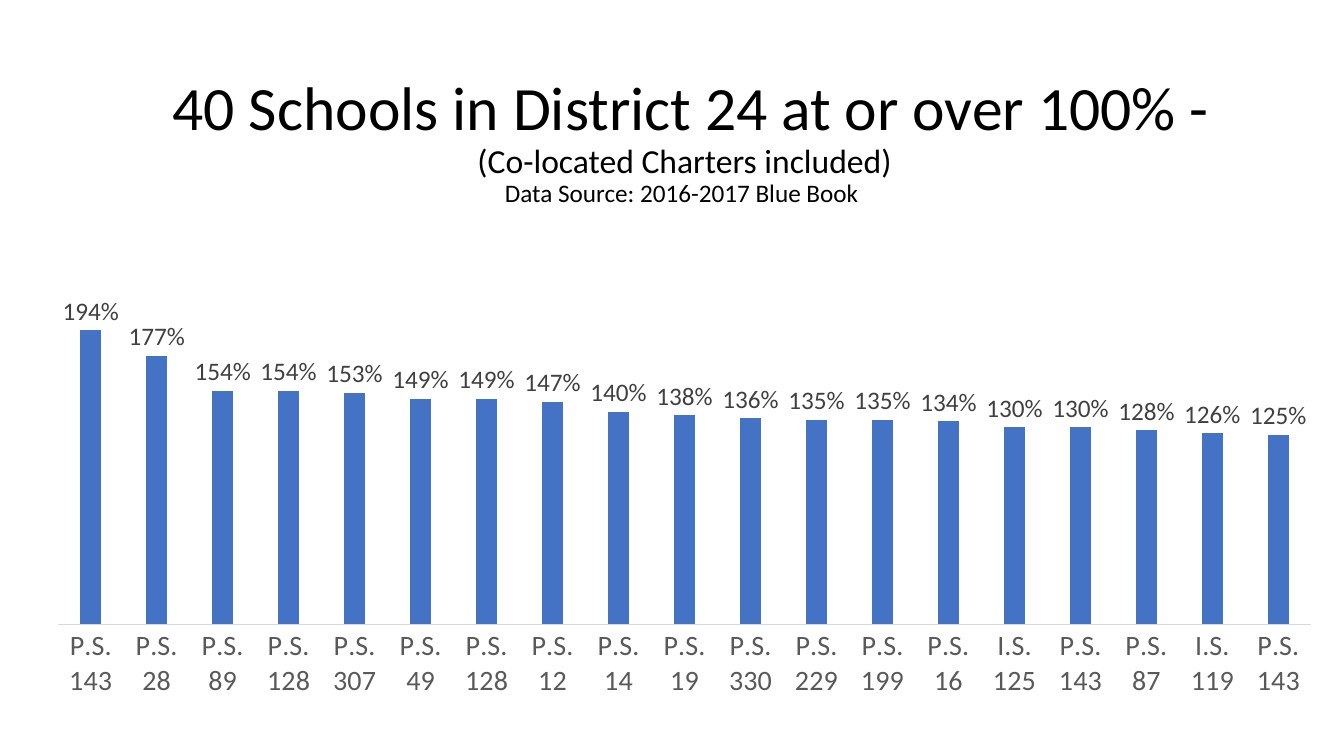
import lxml.etree
import pptx
import pptx.chart.data
import pptx.dml.color
import pptx.enum.chart
import pptx.enum.text
import pptx.oxml.ns
import pptx.util

Inches = pptx.util.Inches
Pt = pptx.util.Pt
qn = pptx.oxml.ns.qn

FONT = "Calibri"
COLORS = {
    "title": "000000",
    "bar": "4472C4",
    "label": "404040",
    "axis": "595959",
    "line": "D9D9D9",
}
TITLE = [
    (" 40 Schools in District 24 at or over 100% -", 44),
    ("(Co-located Charters included)", 24),
    ("Data Source: 2016-2017 Blue Book ", 18),
]
SCHOOLS = [
    ("P.S. 143", 1.94), ("P.S. 28", 1.77), ("P.S. 89", 1.54),
    ("P.S. 128", 1.54), ("P.S. 307", 1.53), ("P.S. 49", 1.49),
    ("P.S. 128", 1.49), ("P.S. 12", 1.47), ("P.S. 14", 1.4),
    ("P.S. 19", 1.38), ("P.S. 330", 1.36), ("P.S. 229", 1.35),
    ("P.S. 199", 1.35), ("P.S. 16", 1.34), ("I.S. 125", 1.3),
    ("P.S. 143", 1.3), ("P.S. 87", 1.28), ("I.S. 119", 1.26),
    ("P.S. 143", 1.25),
]
PLOT = {"x": 0.012, "y": 0.043, "w": 0.976, "h": 0.774}


def apply(item, values):
    for name, value in values.items():
        setattr(item, name, value)


def color(name):
    return pptx.dml.color.RGBColor.from_string(COLORS[name])


def style(font, size, name):
    apply(font, {"name": FONT, "size": Pt(size), "bold": False})
    font.color.rgb = color(name)


def add_title(slide):
    title = slide.shapes.title
    apply(title, {
        "left": Inches(1.04), "top": Inches(0.69),
        "width": Inches(11.5), "height": Inches(1.45),
    })
    frame = title.text_frame
    apply(frame, {
        "word_wrap": True,
        "auto_size": pptx.enum.text.MSO_AUTO_SIZE.NONE,
        "vertical_anchor": pptx.enum.text.MSO_ANCHOR.MIDDLE,
    })
    para = frame.paragraphs[0]
    apply(para, {"alignment": pptx.enum.text.PP_ALIGN.CENTER, "line_spacing": 0.9})
    for index, (text, size) in enumerate(TITLE):
        run = para.add_run()
        run.text = text
        style(run.font, size, "title")
        if index < len(TITLE) - 1:
            para.add_line_break()
            lxml.etree.SubElement(para._p[-1], qn("a:rPr"), sz=str(size * 100))


def place_plot(chart):
    area = chart._chartSpace.chart.plotArea
    for old in area.findall(qn("c:layout")):
        area.remove(old)
    layout = lxml.etree.Element(qn("c:layout"))
    area.insert(0, layout)
    manual = lxml.etree.SubElement(layout, qn("c:manualLayout"))
    values = {"layoutTarget": "inner", "xMode": "edge", "yMode": "edge", **PLOT}
    for name, value in values.items():
        lxml.etree.SubElement(manual, qn("c:" + name), val=str(value))


def add_bars(slide):
    data = pptx.chart.data.CategoryChartData(number_format="0%")
    names, rates = zip(*SCHOOLS)
    data.categories = names
    data.add_series("Series 1", rates)
    chart = slide.shapes.add_chart(
        pptx.enum.chart.XL_CHART_TYPE.COLUMN_CLUSTERED,
        Inches(0.42), Inches(2.23), Inches(12.74), Inches(4.85), data,
    ).chart
    apply(chart, {"has_legend": False, "has_title": False})
    style(chart.font, 10, "title")
    place_plot(chart)

    plot = chart.plots[0]
    apply(plot, {"gap_width": 219, "overlap": -27, "vary_by_categories": False})
    bars = plot.series[0]
    bars.format.fill.solid()
    bars.format.fill.fore_color.rgb = color("bar")
    labels = bars.data_labels
    apply(labels, {
        "show_value": True,
        "number_format": "0%",
        "number_format_is_linked": False,
        "position": pptx.enum.chart.XL_LABEL_POSITION.OUTSIDE_END,
    })
    style(labels.font, 18, "label")

    none = pptx.enum.chart.XL_TICK_MARK.NONE
    axis = chart.category_axis
    apply(axis, {"major_tick_mark": none, "minor_tick_mark": none})
    style(axis.tick_labels.font, 20, "axis")
    axis.format.line.color.rgb = color("line")
    axis.format.line.width = Pt(0.75)
    apply(chart.value_axis, {
        "visible": False, "has_major_gridlines": False,
        "minimum_scale": 0, "maximum_scale": 2.5,
    })


def main():
    deck = pptx.Presentation()
    apply(deck, {"slide_width": Inches(13.33), "slide_height": Inches(7.5)})
    slide = deck.slides.add_slide(deck.slide_layouts[5])
    add_title(slide)
    add_bars(slide)
    deck.save("out.pptx")


if __name__ == "__main__":
    main()
